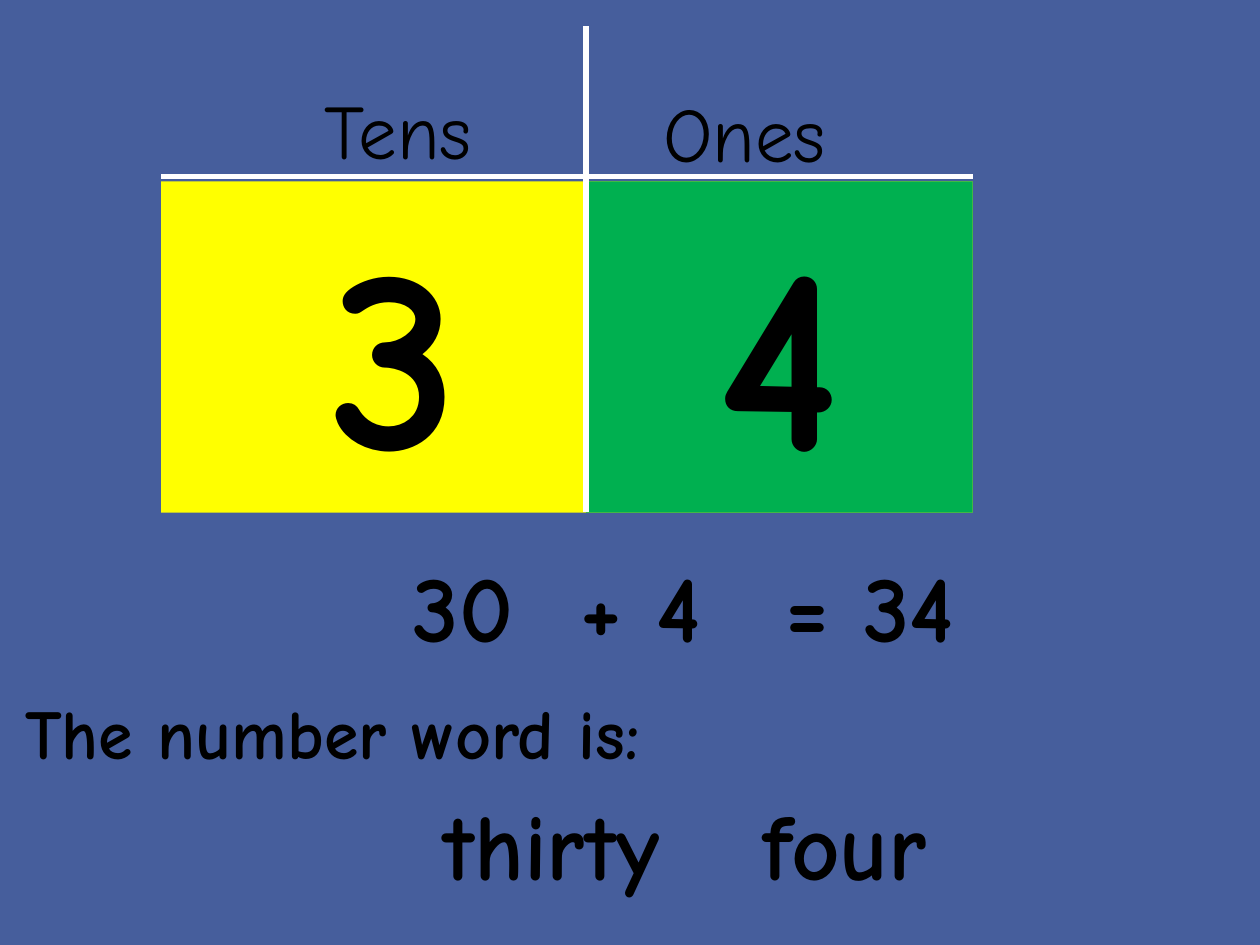
from lxml import etree
from pptx import Presentation
from pptx.dml.color import RGBColor
from pptx.enum.shapes import MSO_CONNECTOR, MSO_SHAPE
from pptx.enum.text import MSO_ANCHOR, MSO_AUTO_SIZE, PP_ALIGN
from pptx.oxml.ns import qn
from pptx.util import Inches, Pt

RECT = MSO_SHAPE.RECTANGLE
STRAIGHT = MSO_CONNECTOR.STRAIGHT
TOP, MIDDLE = MSO_ANCHOR.TOP, MSO_ANCHOR.MIDDLE
LEFT, CENTER = PP_ALIGN.LEFT, PP_ALIGN.CENTER
NO_FIT, GROW = MSO_AUTO_SIZE.NONE, MSO_AUTO_SIZE.SHAPE_TO_FIT_TEXT

BLUE = RGBColor(0x46, 0x5E, 0x9C)
YELLOW = RGBColor(0xFF, 0xFF, 0x00)
GREEN = RGBColor(0x00, 0xB0, 0x50)
WHITE = RGBColor(0xFF, 0xFF, 0xFF)
BLACK = RGBColor(0x00, 0x00, 0x00)

CHART_LEFT, CHART_MID, CHART_RIGHT = 1.28, 4.65, 7.72
CELL_TOP, CELL_HEIGHT = 1.44, 2.63
HEADER_SIZE = (1.98, 1.25)
SUM_TOP, WORD_TOP, ROW_HEIGHT = 4.3, 6.19, 1.01


class SlideBuilder:
    font = "Comic Neue"
    rule_width = Pt(3)
    outline_width = Pt(1.4)

    def __init__(self, slide):
        self.s = slide
        bg = slide.background.fill
        bg.solid()
        bg.fore_color.rgb = BLUE

    def _write(self, sp, text, size, align=CENTER, anchor=TOP, heavy=True):
        """Fill a shape with one run; heavy text is bold with a white outline."""
        tf = sp.text_frame
        tf.word_wrap = True
        tf.auto_size = GROW if heavy else NO_FIT
        tf.vertical_anchor = anchor
        p = tf.paragraphs[0]
        p.alignment = align
        r = p.add_run()
        r.text = text
        r.font.name = self.font
        r.font.size = Pt(size)
        r.font.bold = heavy
        r.font.color.rgb = BLACK
        if heavy:
            ln = etree.Element(qn("a:ln"), w=str(int(self.outline_width)))
            fill = etree.SubElement(ln, qn("a:solidFill"))
            etree.SubElement(fill, qn("a:srgbClr"), val=str(WHITE))
            r.font._element.insert(0, ln)

    def title(self, text, x, y, w, h):
        sp = self.s.shapes.title
        sp.left, sp.top, sp.width, sp.height = map(Inches, (x, y, w, h))
        self._write(sp, text, 44, anchor=MIDDLE, heavy=False)

    def text(self, text, x, y, w, h, size=54, **style):
        sp = self.s.shapes.add_textbox(*map(Inches, (x, y, w, h)))
        self._write(sp, text, size, **style)

    def cell(self, text, x, color, right_inset=0.1):
        """Place-value cell that reaches from x to the right edge."""
        sp = self.s.shapes.add_shape(
            RECT, Inches(x), Inches(CELL_TOP),
            Inches(CHART_RIGHT - x), Inches(CELL_HEIGHT))
        sp.shadow.inherit = False
        sp.fill.solid()
        sp.fill.fore_color.rgb = color
        sp.line.fill.background()
        sp.text_frame.margin_right = Inches(right_inset)
        self._write(sp, text, 150)

    def rule(self, x1, y1, x2, y2):
        c = self.s.shapes.add_connector(
            STRAIGHT, *map(Inches, (x1, y1, x2, y2)))
        c.line.color.rgb = WHITE
        c.line.width = self.rule_width
        etree.SubElement(c._element.spPr, qn("a:effectLst"))


def main():
    prs = Presentation()
    prs.slide_width, prs.slide_height = Inches(10), Inches(7.5)
    b = SlideBuilder(prs.slides.add_slide(prs.slide_layouts[5]))

    b.title("Tens", 2.17, 0.4, *HEADER_SIZE)
    b.text("Ones", 4.92, 0.42, *HEADER_SIZE, size=44, anchor=MIDDLE, heavy=False)
    b.rule(CHART_RIGHT, 1.4, CHART_LEFT, 1.4)

    # The ones cell lies over the right part of the tens cell.
    b.cell("3", CHART_LEFT, YELLOW, right_inset=2.84)
    b.cell("4", CHART_MID, GREEN)

    for text, x, w in (("30", 2.85, 1.65), ("+ 4", 4.26, 1.65), ("= 34", 5.68, 2.45)):
        b.text(text, x, SUM_TOP, w, ROW_HEIGHT)
    for text, x in (("thirty", 2.32), ("four", CHART_MID)):
        b.text(text, x, WORD_TOP, 4.11, ROW_HEIGHT)
    b.text("The number word is:", 0.1, 5.42, 5.81, 0.77, size=40, align=LEFT)

    b.rule(CHART_MID, 0.21, CHART_MID, 4.06)
    prs.save("out.pptx")


if __name__ == "__main__":
    main()
